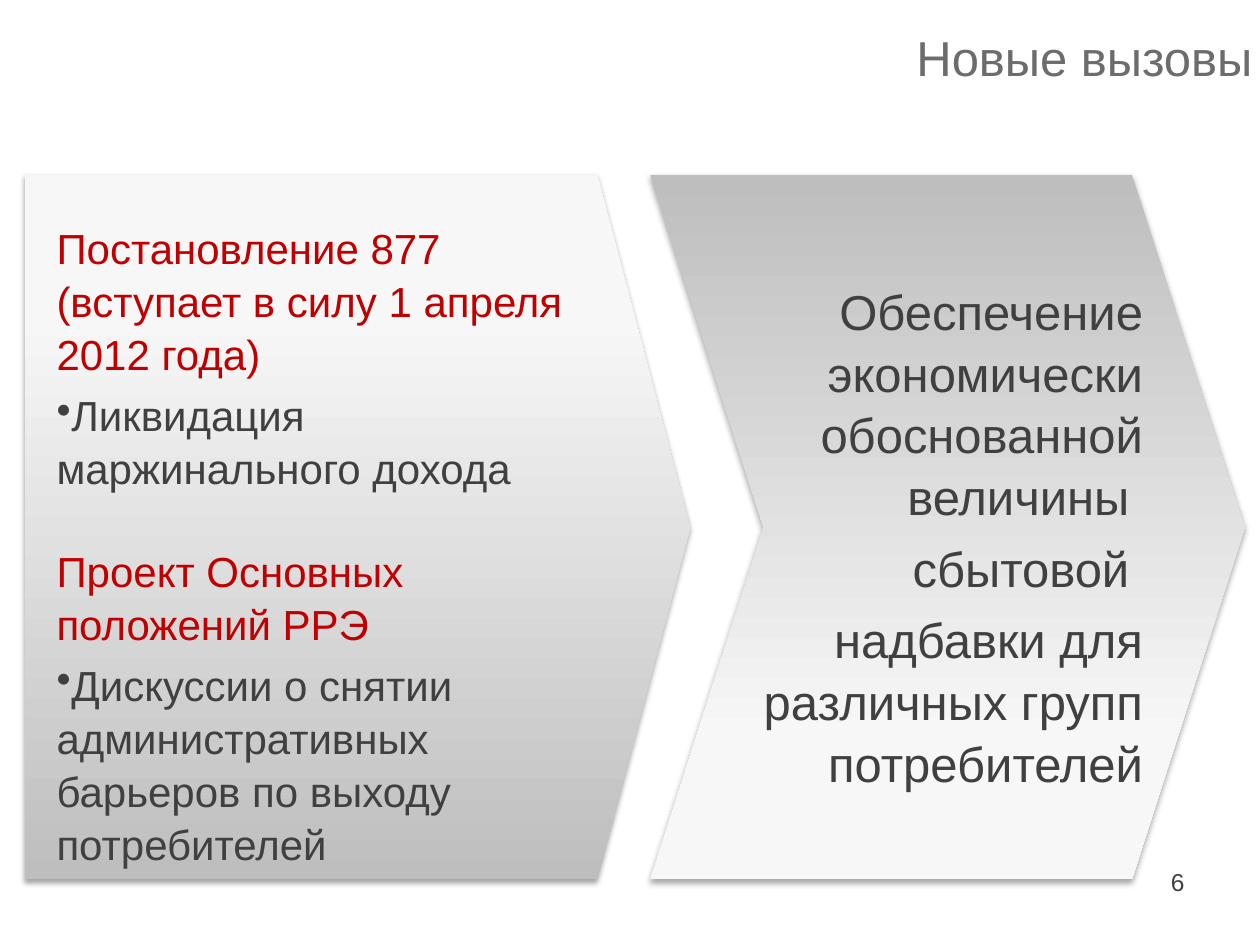
from dataclasses import dataclass

from lxml import etree
from pptx import Presentation
from pptx.dml.color import RGBColor
from pptx.enum.shapes import MSO_SHAPE
from pptx.enum.text import MSO_ANCHOR, PP_ALIGN
from pptx.oxml import parse_xml
from pptx.oxml.ns import nsdecls, qn
from pptx.util import Cm, Pt

CHEVRON, PENTAGON = MSO_SHAPE.CHEVRON, MSO_SHAPE.PENTAGON
LEFT, RIGHT = PP_ALIGN.LEFT, PP_ALIGN.RIGHT
TOP, MIDDLE = MSO_ANCHOR.TOP, MSO_ANCHOR.MIDDLE
TITLE_ONLY = 5


@dataclass(frozen=True)
class Theme:
    font: str = "Arial"
    title: RGBColor = RGBColor(0x6C, 0x6C, 0x6C)
    text: RGBColor = RGBColor(0x40, 0x40, 0x40)
    accent: RGBColor = RGBColor(0xC0, 0x00, 0x00)
    dark: RGBColor = RGBColor(0xBE, 0xBE, 0xBE)
    light: RGBColor = RGBColor(0xF7, 0xF7, 0xF7)
    large: int = 28
    medium: int = 24
    small: int = 14


THEME = Theme()


def place(shape, left, top, width, height):
    shape.left, shape.top = Cm(left), Cm(top)
    shape.width, shape.height = Cm(width), Cm(height)


def add_shadow(shape):
    shape.shadow.inherit = False
    effects = shape._element.spPr.find(qn("a:effectLst"))
    effects.append(parse_xml(
        f'<a:outerShdw {nsdecls("a")} blurRad="{Pt(3.1)}" dist="{Pt(1.8)}" '
        'dir="5400000" rotWithShape="0"><a:srgbClr val="000000">'
        '<a:alpha val="35000"/></a:srgbClr></a:outerShdw>'))


def add_arrow(page, kind, left, width, point, angle):
    arrow = page.shapes.add_shape(kind, Cm(left), Cm(3.53), Cm(width), Cm(14.2))
    arrow.adjustments[0] = point
    arrow.line.fill.background()
    arrow.fill.gradient()
    arrow.fill.gradient_angle = angle
    start, end = arrow.fill.gradient_stops
    start.color.rgb, start.position = THEME.dark, 0
    end.color.rgb, end.position = THEME.light, 0.8
    add_shadow(arrow)


def add_bullet(para):
    properties = para._p.get_or_add_pPr()
    properties.set("marL", "0")
    properties.set("indent", "0")
    etree.SubElement(properties, qn("a:buChar")).set("char", "•")


def write(frame, items, size, align=LEFT, anchor=TOP, spacing=1.05):
    frame.word_wrap = True
    frame.vertical_anchor = anchor
    for index, (text, color, bulleted) in enumerate(items):
        para = frame.add_paragraph() if index else frame.paragraphs[0]
        para.alignment = align
        para.line_spacing = spacing
        para.space_before = Pt(size * 0.2 if index else 0)
        if bulleted:
            add_bullet(para)
        span = para.add_run()
        span.text = text
        span.font.name = THEME.font
        span.font.size = Pt(size)
        span.font.color.rgb = color


def add_text(page, bounds, items, size, **style):
    box = page.shapes.add_textbox(*map(Cm, bounds))
    write(box.text_frame, items, size, **style)


def add_title(page, text):
    title = page.shapes.title
    place(title, 5, 0.33, 20.5, 1.8)
    write(title.text_frame, [(text, THEME.title, False)], THEME.large,
          align=RIGHT, anchor=MIDDLE, spacing=0.9)


def add_topic(page, top, heading, point):
    items = [(heading, THEME.accent, False), (point, THEME.text, True)]
    add_text(page, (0.89, top, 11.23, 6.07), items, THEME.medium)


def main():
    deck = Presentation()
    deck.slide_width, deck.slide_height = Cm(25.4), Cm(19.05)
    page = deck.slides.add_slide(deck.slide_layouts[TITLE_ONLY])
    add_title(page, "Новые вызовы")
    add_arrow(page, CHEVRON, 13.11, 11.99, 0.19, 270)
    add_arrow(page, PENTAGON, 0.51, 13.41, 0.14, 90)
    goals = ["Обеспечение экономически обоснованной величины ", "сбытовой ",
             "надбавки для различных групп потребителей"]
    add_text(page, (14.53, 5.49, 8.76, 9.45),
             [(goal, THEME.text, False) for goal in goals],
             THEME.large, align=RIGHT)
    add_topic(page, 4.32, "Постановление 877 (вступает в силу 1 апреля 2012 года)",
              "Ликвидация маржинального дохода")
    add_topic(page, 10.82, "Проект Основных положений РРЭ",
              "Дискуссии о снятии административных барьеров по выходу потребителей")
    add_text(page, (18.21, 17.35, 5.92, 1.32), [("6", THEME.text, False)],
             THEME.small, align=RIGHT, spacing=1.0)
    deck.save("out.pptx")


if __name__ == "__main__":
    main()
